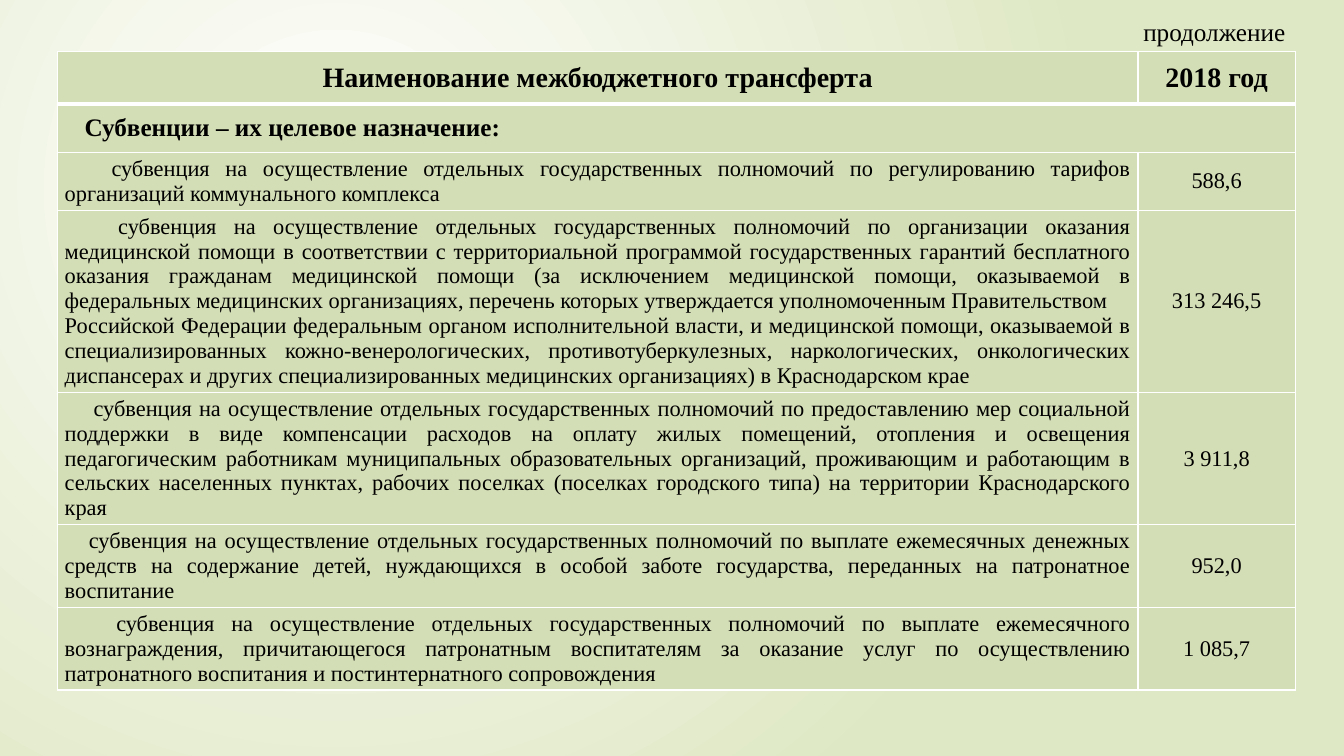
from lxml.etree import SubElement
from pptx import Presentation
from pptx.dml.color import RGBColor
from pptx.enum.text import MSO_ANCHOR as Anchor, PP_ALIGN as Align
from pptx.oxml.ns import qn
from pptx.util import Cm, Pt

FONT = "Times New Roman"
BLACK, WHITE, GREEN, PALE = "000000", "FFFFFF", "D4DEB6", "DFE8C4"
COLUMN_WIDTHS = (27.23, 3.96)
ROW_HEIGHTS = (1.32, 1.22, 1.45, 4.58, 3.33, 2.07, 2.07)
HEADINGS = ("Наименование межбюджетного трансферта", "2018 год")
SECTION = "Субвенции – их целевое назначение:"
PREFIX = "субвенция на осуществление отдельных государственных полномочий по "
GRANTS = (
    (1.18, "регулированию тарифов организаций коммунального комплекса", "588,6"),
    (1.35, "организации оказания медицинской помощи в соответствии с "
     "территориальной программой государственных гарантий бесплатного оказания "
     "гражданам медицинской помощи (за исключением медицинской помощи, "
     "оказываемой в федеральных медицинских организациях, перечень которых "
     "утверждается уполномоченным Правительством\n"
     "Российской Федерации федеральным органом исполнительной власти, и "
     "медицинской помощи, оказываемой в специализированных "
     "кожно-венерологических, противотуберкулезных, наркологических, "
     "онкологических диспансерах и других специализированных медицинских "
     "организациях) в Краснодарском крае", "313 246,5"),
    (0.73, "предоставлению мер социальной поддержки в виде компенсации расходов "
     "на оплату жилых помещений, отопления и освещения педагогическим "
     "работникам муниципальных образовательных организаций, проживающим и "
     "работающим в сельских населенных пунктах, рабочих поселках (поселках "
     "городского типа) на территории Краснодарского края", "3 911,8"),
    (0.61, "выплате ежемесячных денежных средств на содержание детей, "
     "нуждающихся в особой заботе государства, переданных на патронатное "
     "воспитание", "952,0"),
    (1.3, "выплате ежемесячного вознаграждения, причитающегося патронатным "
     "воспитателям за оказание услуг по осуществлению патронатного воспитания и "
     "постинтернатного сопровождения", "1 085,7"),
)


def color(value):
    """Turn a hex string into a colour."""
    return RGBColor.from_string(value)


def write(frame, text, size, align, bold=False, indent=0):
    """Fill a text frame and format it, indenting its first line."""
    frame.text = text
    for para in frame.paragraphs:
        para.alignment = align
        for span in para.runs:
            span.font.name, span.font.size = FONT, Pt(size)
            span.font.bold = bold
            span.font.color.rgb = color(BLACK)
    if indent:
        properties = frame.paragraphs[0]._p.get_or_add_pPr()
        properties.set("marL", "0")
        properties.set("indent", str(Cm(indent)))


def paint_background(slide):
    """Give the slide a circular gradient."""
    fill = slide.background.fill
    fill.gradient()
    for stop, value in zip(fill.gradient_stops, (WHITE, PALE)):
        stop.color.rgb = color(value)
    gradient = slide.element.find(".//" + qn("a:gradFill"))
    gradient.remove(gradient.find(qn("a:lin")))
    circle = SubElement(gradient, qn("a:path"), path="circle")
    SubElement(circle, qn("a:fillToRect"), l="50000", t="50000", r="100000", b="100000")


def style_cell(cell, top, bottom):
    """Set the borders, fill, margins and anchor of a cell."""
    properties = cell._tc.get_or_add_tcPr()
    for side, width in (("L", 1), ("R", 1), ("T", top), ("B", bottom)):
        line = SubElement(properties, qn("a:ln" + side), w=str(Pt(width)))
        solid = SubElement(line, qn("a:solidFill"))
        SubElement(solid, qn("a:srgbClr"), val=WHITE)
    cell.fill.solid()
    cell.fill.fore_color.rgb = color(GREEN)
    cell.margin_left = cell.margin_right = Cm(0.18)
    cell.margin_top = cell.margin_bottom = Cm(0.1)
    cell.vertical_anchor = Anchor.MIDDLE


def add_grant_table(slide):
    """Add the table of grants and their amounts."""
    frame = slide.shapes.add_table(
        len(ROW_HEIGHTS), len(COLUMN_WIDTHS), Cm(1.45), Cm(1.3),
        Cm(sum(COLUMN_WIDTHS)), Cm(sum(ROW_HEIGHTS)))
    table = frame.table
    for column, width in zip(table.columns, COLUMN_WIDTHS):
        column.width = Cm(width)
    for index, (row, height) in enumerate(zip(table.rows, ROW_HEIGHTS)):
        row.height = Cm(height)
        for cell in row.cells:
            style_cell(cell, 3 if index == 1 else 1, 3 if index == 0 else 1)
    for index, heading in enumerate(HEADINGS):
        write(table.cell(0, index).text_frame, heading, 20, Align.CENTER, True)
    table.cell(1, 0).merge(table.cell(1, 1))
    write(table.cell(1, 0).text_frame, SECTION, 18, Align.JUSTIFY, True, 0.5)
    for index, (indent, purpose, amount) in enumerate(GRANTS, 2):
        write(table.cell(index, 0).text_frame, PREFIX + purpose, 16, Align.JUSTIFY,
              indent=indent)
        write(table.cell(index, 1).text_frame, amount, 16, Align.CENTER)


def add_label(slide, text):
    """Add the right-aligned label above the table."""
    box = slide.shapes.add_textbox(Cm(27.43), Cm(0.28), Cm(5.21), Cm(1.02))
    box.text_frame.word_wrap = True
    write(box.text_frame, text, 18, Align.RIGHT)


def main():
    """Build and save the deck."""
    deck = Presentation()
    deck.slide_width, deck.slide_height = Cm(33.87), Cm(19.05)
    slide = deck.slides.add_slide(deck.slide_layouts[6])
    paint_background(slide)
    add_grant_table(slide)
    add_label(slide, "продолжение")
    deck.save("out.pptx")


if __name__ == "__main__":
    main()
